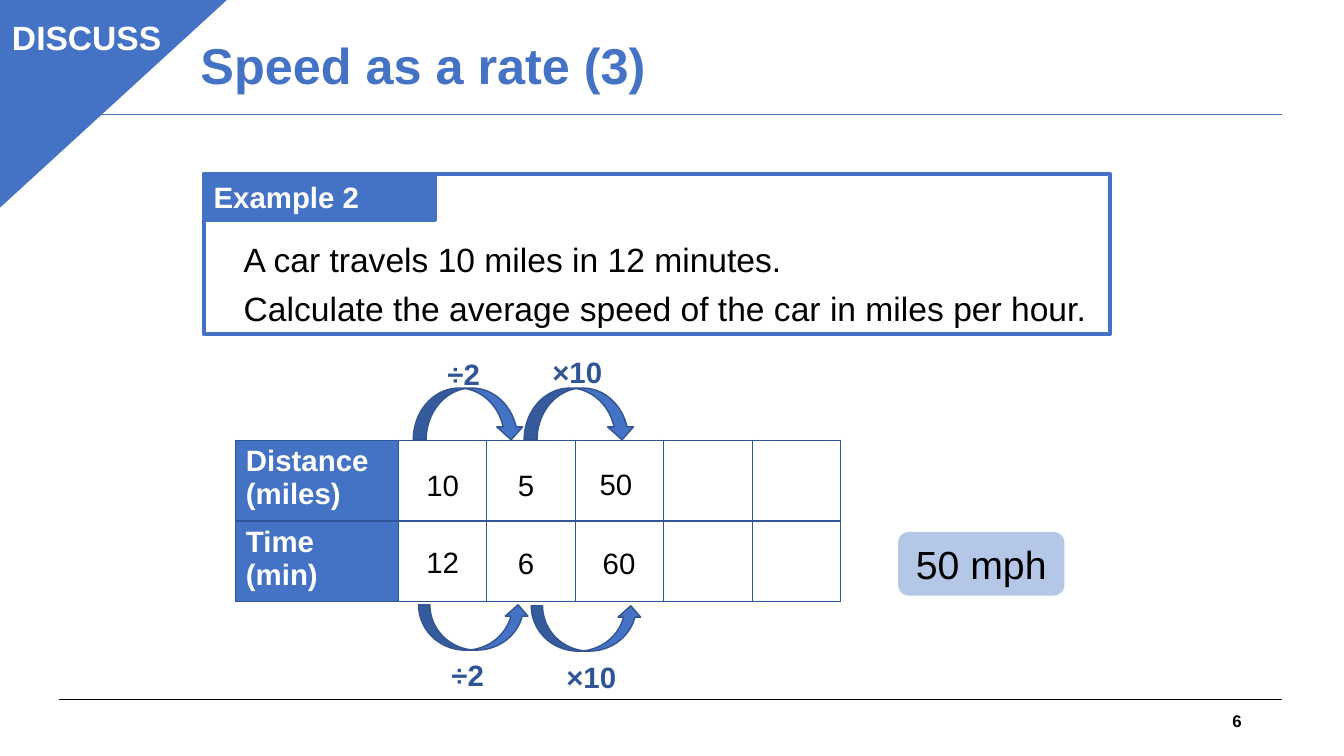
"""Build the discussion slide on speed as a rate."""
import pptx
import pptx.util
import pptx.dml.color
import pptx.enum.shapes
import pptx.enum.text
import lxml.etree
import pptx.oxml.ns

Pt = pptx.util.Pt
MSO = pptx.enum.shapes.MSO_SHAPE
ALIGN = pptx.enum.text.PP_ALIGN
MIDDLE = pptx.enum.text.MSO_ANCHOR.MIDDLE
BLUE, NAVY, BLACK, WHITE = "4472C4", "2F5597", "000000", "FFFFFF"
rgb = pptx.dml.color.RGBColor.from_string
qn = pptx.oxml.ns.qn


def write(frame, text, size, color, bold=False, align=ALIGN.LEFT, spacing=1.0, after=0):
    frame.word_wrap = True
    frame.text = text
    for para in frame.paragraphs:
        para.alignment = align
        para.line_spacing = spacing
        para.space_after = Pt(after)
        para.font.name = "Arial"
        para.font.size = Pt(size)
        para.font.bold = bold
        para.font.color.rgb = rgb(color)


def add_block(kind, left, top, width, height, fill=None, line=None, weight=1, flip=False):
    block = page.shapes.add_shape(kind, Pt(left), Pt(top), Pt(width), Pt(height))
    block.shadow.inherit = False
    if fill:
        block.fill.solid()
        block.fill.fore_color.rgb = rgb(fill)
    else:
        block.fill.background()
    if line:
        block.line.color.rgb = rgb(line)
        block.line.width = Pt(weight)
    else:
        block.line.fill.background()
    if flip:
        block._element.spPr.find(qn("a:xfrm")).set("flipV", "1")
    return block


deck = pptx.Presentation()
deck.slide_width, deck.slide_height = Pt(960), Pt(540)
page = deck.slides.add_slide(deck.slide_layouts[5])

title = page.shapes.title
title.left, title.top, title.width, title.height = Pt(136), Pt(8.5), Pt(620), Pt(80)
title.text_frame.vertical_anchor = MIDDLE
write(title.text_frame, "Speed as a rate (3)", 36, BLUE, True, spacing=0.9)

for y, color in [(499.7, BLACK), (82, BLUE)]:
    rule = page.shapes.add_connector(
        pptx.enum.shapes.MSO_CONNECTOR.STRAIGHT, Pt(42.5), Pt(y), Pt(916), Pt(y))
    rule.line.color.rgb = rgb(color)
    rule.line.width = Pt(0.75)
    lxml.etree.SubElement(rule._element.spPr, qn("a:effectLst"))

corner = add_block(MSO.ISOSCELES_TRIANGLE, -2, -1.5, 165, 151, BLUE, BLUE, flip=True)
corner.adjustments[0] = 0

label = add_block(MSO.RECTANGLE, 145.5, 124.5, 165, 32.5, BLUE, BLUE, 3)
label.text_frame.vertical_anchor = MIDDLE
write(label.text_frame, "Example 2", 21, WHITE, True)
add_block(MSO.RECTANGLE, 145.5, 124.5, 647.5, 114, line=BLUE, weight=3)

question = page.shapes.add_textbox(Pt(167), Pt(165), Pt(628), Pt(70.5))
write(question.text_frame, "A car travels 10 miles in 12 minutes.\n"
      "Calculate the average speed of the car in miles per hour.",
      24, BLACK, spacing=1.07, after=4.5)

headings = ["Distance (miles)", "Time (min)"]
table = page.shapes.add_table(2, 6, Pt(168.5), Pt(314.5), Pt(432), Pt(115.2)).table
table.first_row = table.horz_banding = False
for index, column in enumerate(table.columns):
    column.width = Pt(63.2 if index else 116)
for row, heading in zip(table.rows, headings):
    row.height = Pt(57.6)
    for index, cell in enumerate(row.cells):
        props = cell._tc.get_or_add_tcPr()
        for side in ("a:lnL", "a:lnR", "a:lnT", "a:lnB"):
            border = lxml.etree.SubElement(props, qn(side), w=str(Pt(1)))
            paint = lxml.etree.SubElement(border, qn("a:solidFill"))
            lxml.etree.SubElement(paint, qn("a:srgbClr"), val=NAVY)
        if index:
            cell.fill.background()
        else:
            cell.fill.solid()
            cell.fill.fore_color.rgb = rgb(BLUE)
            write(cell.text_frame, heading, 21, WHITE, True)

for left, top, flip in [(299, 432, False), (379.5, 432.7, False),
                        (295.2, 277.2, True), (374.4, 277.2, True)]:
    add_block(MSO.CURVED_UP_ARROW, left, top, 79.2, 37 if flip else 32.4,
              BLUE, "325491", flip=flip)

values = [("10", 297.4, 328.3), ("5", 362.9, 328.3), ("50", 421.2, 327.6),
          ("12", 297.4, 383), ("6", 362.9, 383.8), ("60", 423.4, 383.8)]
factors = [("÷2", 312.5, 249), ("×10", 387.4, 247.7),
           ("÷2", 315.4, 464.4), ("×10", 397.4, 465.8)]
for items, width, color, bold in [(values, 57.6, BLACK, False), (factors, 54, NAVY, True)]:
    for text, left, top in items:
        box = page.shapes.add_textbox(Pt(left), Pt(top), Pt(width), Pt(32.4))
        write(box.text_frame, text, 21, color, bold, spacing=1.07, after=4.5)

answer = add_block(MSO.ROUNDED_RECTANGLE, 641.5, 380, 118.8, 45.4, "B4C7E7")
answer.text_frame.vertical_anchor = MIDDLE
write(answer.text_frame, "50 mph", 28, BLACK, align=ALIGN.CENTER)

banner = page.shapes.add_textbox(Pt(-0.7), Pt(8.6), Pt(125.3), Pt(36))
write(banner.text_frame, "DISCUSS", 24, WHITE, True, ALIGN.CENTER)

number = page.shapes.add_textbox(Pt(678), Pt(500.4), Pt(216), Pt(28.8))
number.text_frame.vertical_anchor = MIDDLE
write(number.text_frame, "6", 12, BLACK, True, ALIGN.RIGHT)

deck.save("out.pptx")
